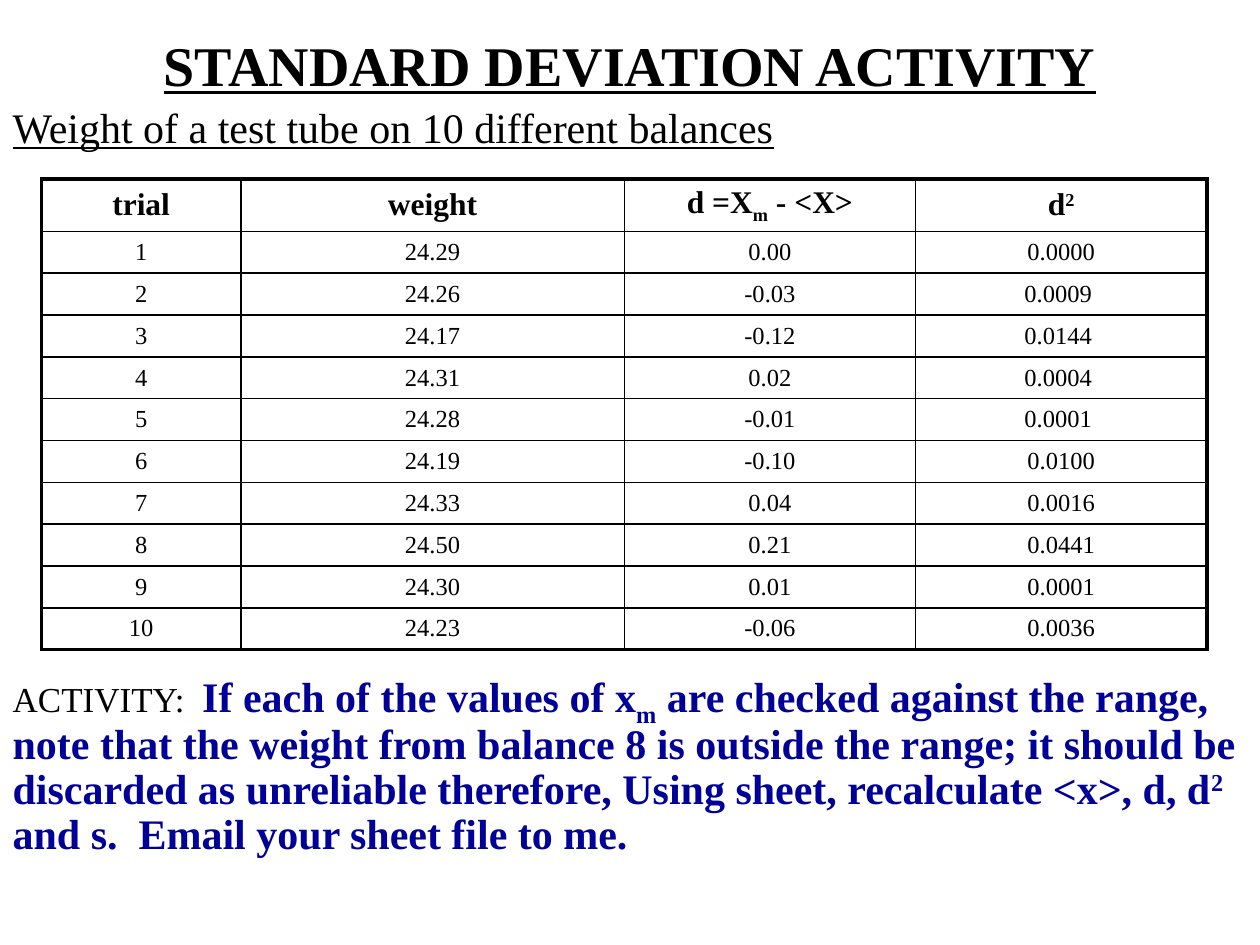
import dataclasses
import typing

import lxml.etree
import pptx
import pptx.dml.color
import pptx.enum.text
import pptx.oxml.ns
import pptx.util

Pt = pptx.util.Pt
RGB = pptx.dml.color.RGBColor
ALIGN = pptx.enum.text.PP_ALIGN
ANCHOR = pptx.enum.text.MSO_ANCHOR


@dataclasses.dataclass(frozen=True)
class Theme:
    font: str = "Times New Roman"
    ink: str = "000000"
    accent: str = "000099"
    title: float = 32
    body: float = 24
    label: float = 20
    header: float = 18
    cell: float = 14
    outer_rule: float = 2.25
    inner_rule: float = 1
    line_spacing: float = 0.9


@dataclasses.dataclass(frozen=True)
class Piece:
    """A stretch of text in one format; shift is a baseline offset in percent."""
    text: str
    size: float
    bold: bool = False
    underline: bool = False
    color: str = Theme.ink
    shift: int = 0


@dataclasses.dataclass(frozen=True)
class Area:
    """A rectangle in shares of the slide's width and height."""
    left: float
    top: float
    width: float
    height: float


THEME = Theme()
SLIDE_WIDTH, SLIDE_HEIGHT = pptx.util.Inches(10), pptx.util.Inches(7.5)
SUBSCRIPT, SUPERSCRIPT = -25, 30

TITLE_AREA = Area(0, 0.25 / 7.5, 1, 0.55 / 7.5)
BODY_AREA = Area(0, 0.8 / 7.5, 1, 6.7 / 7.5)
TABLE_AREA = Area(0.33 / 10, 1.42 / 7.5, 9.25 / 10, 3.73 / 7.5)
COLUMN_SHARES = (0.171, 0.329, 0.25, 0.25)
HEADER_SHARE = 0.11
TABLE_GAP = 296.5  # points kept free between the subheading and the activity

MEASUREMENTS = (
    ("24.29", "0.00", "0.0000"),
    ("24.26", "-0.03", "0.0009 "),
    ("24.17", "-0.12", "0.0144 "),
    ("24.31", "0.02", "0.0004 "),
    ("24.28", "-0.01", "0.0001 "),
    ("24.19", "-0.10", "0.0100"),
    ("24.33", "0.04", "0.0016"),
    ("24.50", "0.21", "0.0441"),
    ("24.30", "0.01", "0.0001"),
    ("24.23", "-0.06", "0.0036"),
)


def place(area: Area) -> tuple[int, int, int, int]:
    return (int(area.left * SLIDE_WIDTH), int(area.top * SLIDE_HEIGHT),
            int(area.width * SLIDE_WIDTH), int(area.height * SLIDE_HEIGHT))


def write(paragraph, pieces: typing.Sequence[Piece], align) -> None:
    paragraph.alignment = align
    for piece in pieces:
        run = paragraph.add_run()
        run.text = piece.text
        run.font.name = THEME.font
        run.font.size = Pt(piece.size)
        run.font.bold = piece.bold
        run.font.underline = piece.underline
        run.font.color.rgb = RGB.from_string(piece.color)
        if piece.shift:
            run.font._element.set("baseline", str(piece.shift * 1000))


def fit(placeholder, area: Area):
    placeholder.left, placeholder.top, placeholder.width, placeholder.height = place(area)
    frame = placeholder.text_frame
    frame.word_wrap = True
    frame.auto_size = pptx.enum.text.MSO_AUTO_SIZE.NONE
    frame.vertical_anchor = ANCHOR.TOP
    return frame


def rule_cell(cell, widths: dict[str, float]) -> None:
    properties = cell._tc.get_or_add_tcPr()
    for position, (side, width) in enumerate(widths.items()):
        line = lxml.etree.Element(pptx.oxml.ns.qn(f"a:{side}"), w=str(int(Pt(width))))
        fill = lxml.etree.SubElement(line, pptx.oxml.ns.qn("a:solidFill"))
        lxml.etree.SubElement(fill, pptx.oxml.ns.qn("a:srgbClr"), val=THEME.ink)
        properties.insert(position, line)


def draw_table(slide, rows: typing.Sequence[typing.Sequence[typing.Sequence[Piece]]]) -> None:
    left, top, width, height = place(TABLE_AREA)
    last_row, last_column = len(rows) - 1, len(COLUMN_SHARES) - 1
    table = slide.shapes.add_table(len(rows), len(COLUMN_SHARES), left, top, width, height).table
    table.first_row = table.horz_banding = False
    for column, share in zip(table.columns, COLUMN_SHARES):
        column.width = int(width * share)
    for r, row in enumerate(rows):
        share = (1 - HEADER_SHARE) / last_row if r else HEADER_SHARE
        table.rows[r].height = int(height * share)
        for c, pieces in enumerate(row):
            cell = table.cell(r, c)
            cell.fill.background()
            cell.vertical_anchor = ANCHOR.MIDDLE
            write(cell.text_frame.paragraphs[0], pieces, ALIGN.CENTER)
            on_edge = {"lnL": c == 0, "lnR": c == last_column,
                       "lnT": r == 0, "lnB": r == last_row}
            rule_cell(cell, {side: THEME.outer_rule if edge else THEME.inner_rule
                             for side, edge in on_edge.items()})


def heading(text: str, shift: int = 0) -> Piece:
    return Piece(text, THEME.header, bold=True, shift=shift)


def task(text: str, shift: int = 0) -> Piece:
    return Piece(text, THEME.body, bold=True, color=THEME.accent, shift=shift)


def main() -> None:
    deck = pptx.Presentation()
    deck.slide_width, deck.slide_height = SLIDE_WIDTH, SLIDE_HEIGHT
    slide = deck.slides.add_slide(deck.slide_layouts[0])

    # Title
    title = fit(slide.shapes.title, TITLE_AREA).paragraphs[0]
    write(title, [Piece("STANDARD DEVIATION ACTIVITY", THEME.title, bold=True, underline=True)],
          ALIGN.CENTER)

    # Subheading above the table, activity below it
    body = fit(slide.placeholders[1], BODY_AREA)
    subheading, activity = body.paragraphs[0], body.add_paragraph()
    write(subheading, [Piece("Weight of a test tube on 10 different balances", THEME.body,
                             underline=True)], ALIGN.LEFT)
    write(activity, [
        Piece("ACTIVITY:  ", THEME.label),
        task("If each of the values of x"), task("m", SUBSCRIPT),
        task(" are checked against the range, note that the weight from balance 8 is outside "
             "the range; it should be discarded as unreliable therefore, Using sheet, "
             "recalculate <x>, d, d"),
        task("2", SUPERSCRIPT), task(" and s.  Email your sheet file to me."),
    ], ALIGN.LEFT)
    for paragraph, gap in ((title, 0), (subheading, 0), (activity, TABLE_GAP)):
        paragraph.line_spacing = THEME.line_spacing
        paragraph.space_before = Pt(gap)

    # Table of trials
    header = [[heading("trial")], [heading("weight")],
              [heading("d =X"), heading("m", SUBSCRIPT), heading(" - <X>")],
              [heading("d"), heading("2", SUPERSCRIPT)]]
    trials = [[[Piece(value, THEME.cell)] for value in (str(number), *values)]
              for number, values in enumerate(MEASUREMENTS, start=1)]
    draw_table(slide, [header, *trials])

    deck.save("out.pptx")


if __name__ == "__main__":
    main()
